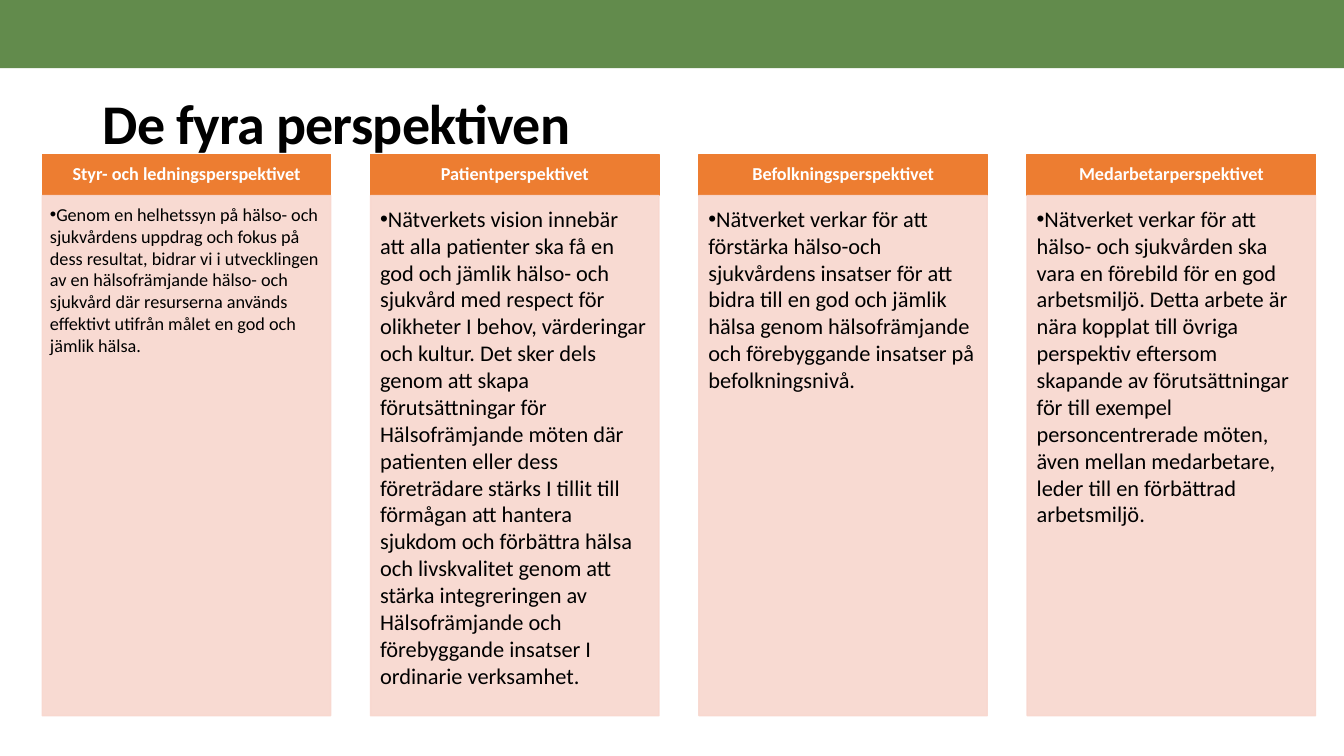
from lxml.etree import SubElement
from pptx import Presentation
from pptx.dml.color import RGBColor
from pptx.enum.shapes import MSO_SHAPE
from pptx.enum.text import MSO_ANCHOR, MSO_AUTO_SIZE, PP_ALIGN
from pptx.oxml.ns import qn
from pptx.util import Pt

FONT = "Calibri"
GREEN, ORANGE, PINK = "44752A", "ED7D31", "F8D7CE"
BLACK, WHITE = "000000", "FFFFFF"
HEADER_HEIGHT = 29.4

# Heading, body text, body size, insets (left, top, right, bottom), bullet indent
PERSPECTIVES = [
    ("Styr- och ledningsperspektivet",
     "Genom en helhetssyn på hälso- och sjukvårdens uppdrag och fokus på dess resultat, "
     "bidrar vi i utvecklingen av en hälsofrämjande hälso- och sjukvård där resurserna "
     "används effektivt utifrån målet en god och jämlik hälsa.",
     13, (5.5, 5.5, 7.3, 8.2), -9),
    ("Patientperspektivet",
     "Nätverkets vision innebär att alla patienter ska få en god och jämlik hälso- och "
     "sjukvård med respect för olikheter I behov, värderingar och kultur. Det sker dels "
     "genom att skapa förutsättningar för Hälsofrämjande möten där patienten eller dess "
     "företrädare stärks I tillit till förmågan att hantera sjukdom och förbättra hälsa "
     "och livskvalitet genom att stärka integreringen av Hälsofrämjande och förebyggande "
     "insatser I ordinarie verksamhet.",
     16, (6.8, 6.8, 9, 10.2), -13.5),
    ("Befolkningsperspektivet",
     "Nätverket verkar för att förstärka hälso-och sjukvårdens insatser för att bidra "
     "till en god och jämlik hälsa genom hälsofrämjande och förebyggande insatser på "
     "befolkningsnivå.",
     16, (6.8, 6.8, 9, 10.2), -13.5),
    ("Medarbetarperspektivet",
     "Nätverket verkar för att hälso- och sjukvården ska vara en förebild för en god "
     "arbetsmiljö. Detta arbete är nära kopplat till övriga perspektiv eftersom skapande "
     "av förutsättningar för till exempel personcentrerade möten, även mellan "
     "medarbetare, leder till en förbättrad arbetsmiljö.",
     16, (6.8, 6.8, 9, 10.2), -13.5),
]


def rgb(color):
    return RGBColor.from_string(color)


def add_rect(slide, left, top, width, height, color, opacity=100, outlined=True):
    sp = slide.shapes.add_shape(MSO_SHAPE.RECTANGLE, Pt(left), Pt(top), Pt(width), Pt(height))
    sp.shadow.inherit = False
    sp.fill.solid()
    sp.fill.fore_color.rgb = rgb(color)
    if outlined:
        sp.line.color.rgb = rgb(color)
        sp.line.width = Pt(1)
    else:
        sp.line.fill.background()
    if opacity < 100:
        for clr in sp._element.spPr.iter(qn("a:srgbClr")):
            SubElement(clr, qn("a:alpha"), val=str(opacity * 1000))
    return sp


def set_text(sp, text, size, color, bold, align, anchor, insets):
    """Fill a shape with one paragraph and return that paragraph."""
    tf = sp.text_frame
    tf.text = text
    tf.word_wrap = True
    tf.auto_size = MSO_AUTO_SIZE.NONE
    tf.vertical_anchor = anchor
    tf.margin_left, tf.margin_top, tf.margin_right, tf.margin_bottom = map(Pt, insets)
    p = tf.paragraphs[0]
    p.alignment = align
    font = p.runs[0].font
    font.name, font.size, font.bold = FONT, Pt(size), bold
    font.color.rgb = rgb(color)
    return p


def add_bullet(p, indent):
    pPr = p._p.get_or_add_pPr()
    pPr.set("marL", "0")
    pPr.set("indent", str(Pt(indent)))
    SubElement(pPr, qn("a:buFont"), typeface="Arial")
    SubElement(pPr, qn("a:buChar"), char="•")


def set_title(slide, left, top, width, height):
    title = slide.shapes.title
    title.left, title.top, title.width, title.height = map(Pt, (left, top, width, height))
    p = set_text(title, "De fyra perspektiven", 40, BLACK, True,
                 PP_ALIGN.LEFT, MSO_ANCHOR.MIDDLE, (7.2, 3.6, 7.2, 3.6))
    p.line_spacing = 0.9
    p.runs[0]._r.get_or_add_rPr().set("spc", "-50")


def add_column(slide, left, top, width, height, perspective):
    heading, body, size, insets, indent = perspective
    header = add_rect(slide, left, top, width, HEADER_HEIGHT, ORANGE)
    p = set_text(header, heading, 13, WHITE, True,
                 PP_ALIGN.CENTER, MSO_ANCHOR.MIDDLE, (7.2, 4.2, 7.2, 4.2))
    p.line_spacing = 0.9

    panel = add_rect(slide, left, top + HEADER_HEIGHT, width, height - HEADER_HEIGHT, PINK, 90)
    p = set_text(panel, body, size, BLACK, False, PP_ALIGN.LEFT, MSO_ANCHOR.TOP, insets)
    p.level = 1
    add_bullet(p, indent)


def add_columns(slide, left, top, width, height, column_width=206):
    """Spread the perspectives evenly over the given box."""
    pitch = (width - column_width) / (len(PERSPECTIVES) - 1)
    for i, perspective in enumerate(PERSPECTIVES):
        add_column(slide, left + i * pitch, top, column_width, height, perspective)


def main():
    prs = Presentation()
    prs.slide_width, prs.slide_height = Pt(960), Pt(540)
    slide = prs.slides.add_slide(prs.slide_layouts[5])
    add_rect(slide, 0, 0, 960, 48.7, GREEN, 84, outlined=False)
    set_title(slide, 66, 53.3, 828, 73.4)
    add_columns(slide, 30.2, 110.2, 909.5, 401)
    prs.save("out.pptx")


if __name__ == "__main__":
    main()
